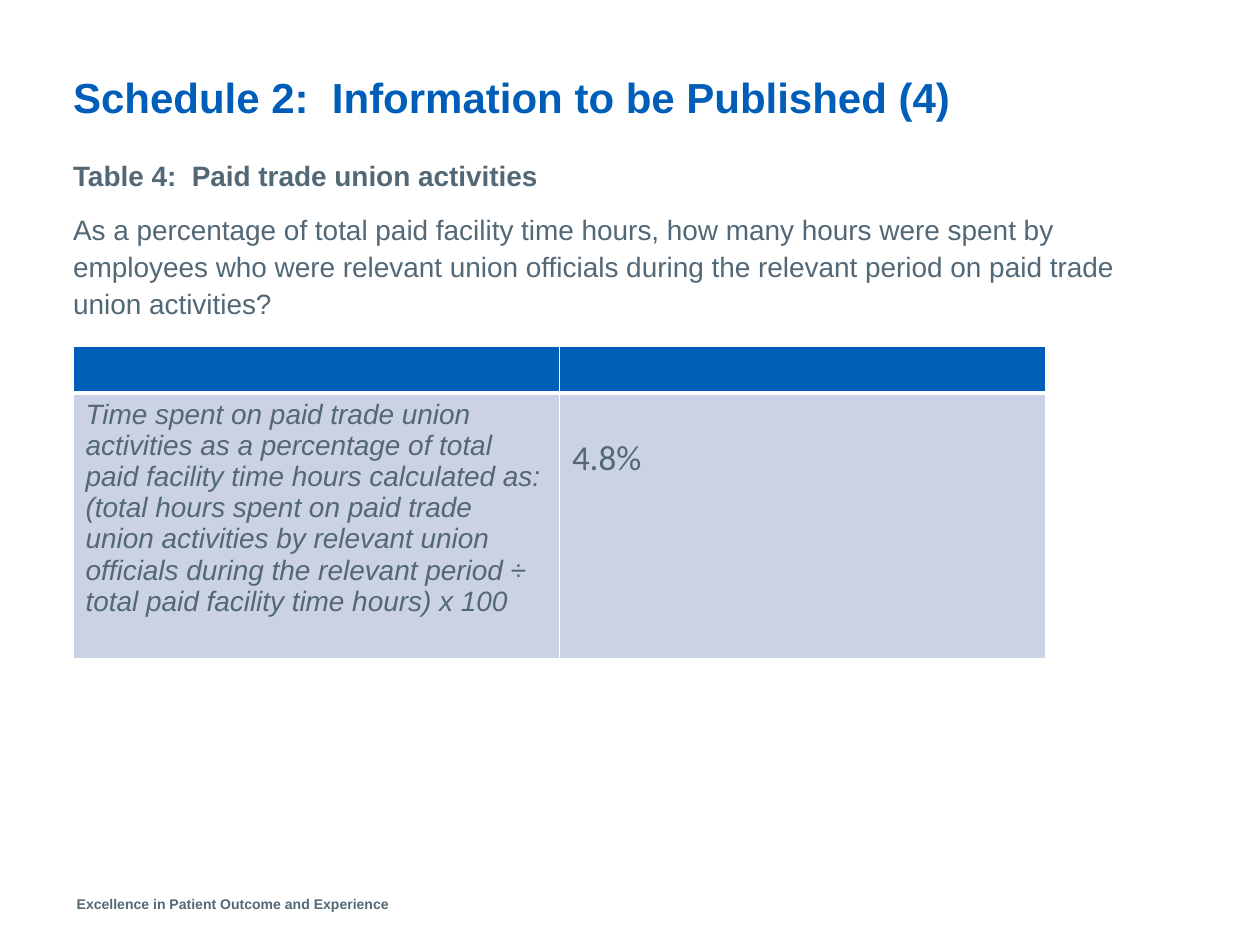
from dataclasses import dataclass
from typing import Any

import pptx
import pptx.dml.color
import pptx.enum.text
import pptx.oxml
import pptx.oxml.ns
import pptx.util

Inches = pptx.util.Inches
Pt = pptx.util.Pt
RGBColor = pptx.dml.color.RGBColor
ANCHOR = pptx.enum.text.MSO_ANCHOR

BLUE = RGBColor(0x00, 0x5E, 0xB8)
SLATE = RGBColor(0x53, 0x68, 0x76)
PALE = RGBColor(0xCC, 0xD2, 0xE6)
WHITE = RGBColor(0xFF, 0xFF, 0xFF)

LEFT = 0.58
TABLE_WIDTH = 7.72


@dataclass
class Para:
    text: str
    size: float
    color: RGBColor = SLATE
    name: str = "Arial"
    bold: bool = False
    italic: bool = False
    line_spacing: float = 1.0
    space_before: float = 0


@dataclass
class Box:
    left: float
    top: float
    width: float
    height: float
    paras: list[Para]
    frame: dict[str, Any]


@dataclass
class Cell:
    row: int
    col: int
    fill: RGBColor
    paras: list[Para]
    margin_top: float = 0.05


def apply(target: Any, values: dict[str, Any]) -> None:
    for key, value in values.items():
        setattr(target, key, value)


def write(tf: Any, paras: list[Para]) -> None:
    for i, para in enumerate(paras):
        p = tf.paragraphs[0] if i == 0 else tf.add_paragraph()
        apply(p, {"line_spacing": para.line_spacing,
                  "space_before": Pt(para.space_before)})
        r = p.add_run()
        r.text = para.text
        apply(r.font, {"name": para.name, "size": Pt(para.size),
                       "bold": para.bold, "italic": para.italic})
        r.font.color.rgb = para.color


def add_box(s: Any, box: Box) -> None:
    sp = s.shapes.add_textbox(Inches(box.left), Inches(box.top),
                              Inches(box.width), Inches(box.height))
    tf = sp.text_frame
    apply(tf, {"word_wrap": True, **box.frame})
    write(tf, box.paras)


def add_border(cell: Any, side: str, width: float) -> None:
    ns = pptx.oxml.ns.nsdecls("a")
    cell._tc.get_or_add_tcPr().append(pptx.oxml.parse_xml(
        f'<a:ln{side} {ns} w="{Pt(width)}"><a:solidFill>'
        f'<a:srgbClr val="{WHITE}"/></a:solidFill></a:ln{side}>'))


def add_cell(tbl: Any, item: Cell) -> None:
    cell = tbl.cell(item.row, item.col)
    header = item.row == 0
    widths = {"L": 1, "R": 1, "T": 1 if header else 3, "B": 3 if header else 1}
    for side, width in widths.items():
        add_border(cell, side, width)
    cell.fill.solid()
    cell.fill.fore_color.rgb = item.fill
    cell.margin_top = Inches(item.margin_top)
    if header:
        cell.margin_bottom = 0
    write(cell.text_frame, item.paras)


FLUSH = {"margin_left": 0, "margin_right": 0, "margin_top": 0, "margin_bottom": 0}

BOXES = [
    Box(0.51, 7.06, 4.02, 0.24,
        [Para("Excellence in Patient Outcome and Experience", 8, bold=True)], {}),
    Box(LEFT, 1.23, 8.43, 1.4, [
        Para("Table 4:  Paid trade union activities", 16, bold=True, line_spacing=1.1),
        Para("As a percentage of total paid facility time hours, how many hours were "
             "spent by employees who were relevant union officials during the relevant "
             "period on paid trade union activities?", 16,
             line_spacing=1.1, space_before=10),
    ], FLUSH),
    Box(LEFT, 0.52, TABLE_WIDTH, 0.45,
        [Para("Schedule 2:  Information to be Published (4)", 24, BLUE,
              bold=True, line_spacing=0.9)],
        {**FLUSH, "vertical_anchor": ANCHOR.BOTTOM}),
]

CELLS = [
    Cell(0, 0, BLUE, [], 0),
    Cell(0, 1, BLUE, [], 0),
    Cell(1, 0, PALE, [
        Para("Time spent on paid trade union activities as a percentage of total paid "
             "facility time hours calculated as:", 16, italic=True),
        Para("(total hours spent on paid trade union activities by relevant union "
             "officials during the relevant period ÷ total paid facility time hours) "
             "x 100", 16, italic=True),
    ]),
    Cell(1, 1, PALE, [Para("4.8%", 20, name="Calibri")], 0.35),
]

ROW_HEIGHTS = [0.37, 2.11]


def main() -> None:
    prs = pptx.Presentation()
    apply(prs, {"slide_width": Inches(10), "slide_height": Inches(7.5)})
    s = prs.slides.add_slide(prs.slide_layouts[6])
    for box in BOXES:
        add_box(s, box)
    tbl = s.shapes.add_table(2, 2, Inches(LEFT), Inches(2.75), Inches(TABLE_WIDTH),
                             Inches(sum(ROW_HEIGHTS))).table
    tbl.horz_banding = False
    for row, height in zip(tbl.rows, ROW_HEIGHTS):
        row.height = Inches(height)
    for item in CELLS:
        add_cell(tbl, item)
    prs.save("out.pptx")


if __name__ == "__main__":
    main()
